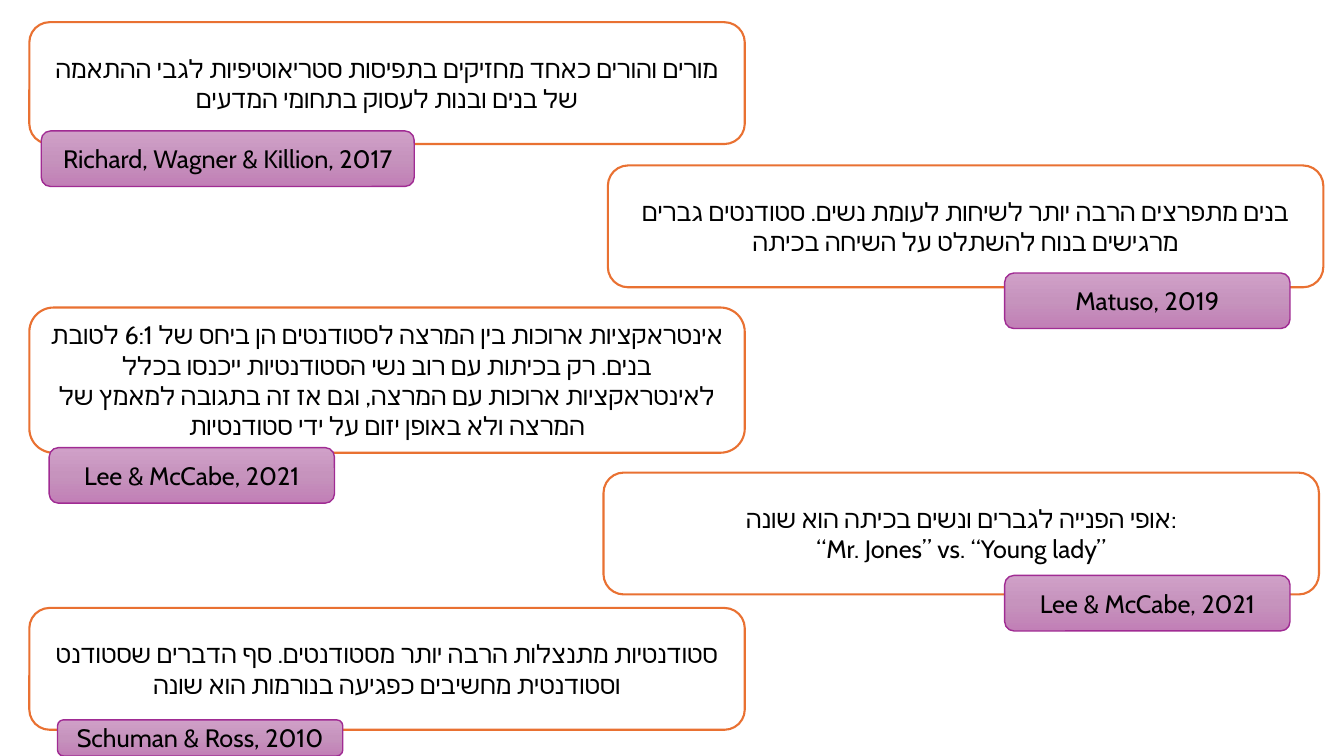
"""Build a slide of five gender-bias findings, each tagged with its citation."""
import copy
from dataclasses import dataclass

import pptx
import pptx.dml.color
import pptx.enum.shapes
import pptx.enum.text
import pptx.oxml
import pptx.oxml.ns
import pptx.util

FINDING_WIDTH = 18.03
TAG_GRADIENT = ((0, "D0A0C8"), (0.5, "C693BD"), (1, "C17FB6"))


@dataclass
class Finding:
    text: str
    citation: str
    left: float
    top: float
    tag_left: float
    tag_top: float
    height: float = 3.07
    tag_width: float = 7.19
    tag_height: float = 1.4


FINDINGS = [
    Finding("מורים והורים כאחד מחזיקים בתפיסות סטריאוטיפיות לגבי ההתאמה "
            "של בנים ובנות לעסוק בתחומי המדעים",
            "Richard, Wagner & Killion, 2017", 0.74, 0.56, 1.04, 3.3, tag_width=9.4),
    Finding("בנים מתפרצים הרבה יותר לשיחות לעומת נשים. סטודנטים גברים "
            "מרגישים בנוח להשתלט על השיחה בכיתה",
            "Matuso, 2019", 15.32, 4.17, 25.32, 6.88),
    Finding("אינטראקציות ארוכות בין המרצה לסטודנטים הן ביחס של 6:1 "
            "לטובת בנים. רק בכיתות עם רוב נשי הסטודנטיות ייכנסו בכלל "
            "לאינטראקציות ארוכות עם המרצה, וגם אז זה בתגובה למאמץ של "
            "המרצה ולא באופן יזום על ידי סטודנטיות",
            "Lee & McCabe, 2021", 0.74, 7.75, 1.24, 11.28, height=3.66),
    Finding("אופי הפנייה לגברים ונשים בכיתה הוא שונה:\v“Mr. Jones” vs. “Young lady”",
            "Lee & McCabe, 2021", 15.21, 11.91, 25.32, 14.5),
    Finding("סטודנטיות מתנצלות הרבה יותר מסטודנטים. סף הדברים שסטודנט "
            "וסטודנטית מחשיבים כפגיעה בנורמות הוא שונה",
            "Schuman & Ross, 2010", 0.74, 15.32, 1.45, 18.14, tag_height=0.91),
]


def color(value: str) -> pptx.dml.color.RGBColor:
    return pptx.dml.color.RGBColor.from_string(value)


def write(shape, text: str, *, size: float = 18, font: str = "Cabin",
          ink: str = "000000") -> None:
    frame = shape.text_frame
    frame.word_wrap = True
    frame.vertical_anchor = pptx.enum.text.MSO_ANCHOR.MIDDLE
    paragraph = frame.paragraphs[0]
    paragraph.text = text
    paragraph.alignment = pptx.enum.text.PP_ALIGN.CENTER
    for run in paragraph.runs:
        run.font.size = pptx.util.Pt(size)
        run.font.name = font
        run.font.color.rgb = color(ink)
        script_font = pptx.oxml.parse_xml(
            f'<a:cs {pptx.oxml.ns.nsdecls("a")} typeface="{font}"/>')
        run.font._element.append(script_font)


def add_box(slide, left: float, top: float, width: float, height: float,
            line: str, weight: float):
    box = slide.shapes.add_shape(
        pptx.enum.shapes.MSO_SHAPE.ROUNDED_RECTANGLE,
        *(pptx.util.Cm(length) for length in (left, top, width, height)))
    box.shadow.inherit = False
    box.line.color.rgb = color(line)
    box.line.width = pptx.util.Pt(weight)
    return box


def fill_gradient(shape) -> None:
    shape.fill.gradient()
    shape.fill.gradient_angle = 270
    stop_list = shape._element.spPr.find(".//" + pptx.oxml.ns.qn("a:gsLst"))
    stop_list.insert(1, copy.deepcopy(stop_list[0]))
    for stop, (position, value) in zip(shape.fill.gradient_stops, TAG_GRADIENT):
        stop.position = position
        stop.color.rgb = color(value)


def add_finding(slide, finding: Finding) -> None:
    statement = add_box(slide, finding.left, finding.top, FINDING_WIDTH,
                        finding.height, "E97132", 1.5)
    statement.fill.solid()
    statement.fill.fore_color.rgb = color("FFFFFF")
    write(statement, finding.text)
    tag = add_box(slide, finding.tag_left, finding.tag_top, finding.tag_width,
                  finding.tag_height, "A02B93", 1)
    fill_gradient(tag)
    write(tag, finding.citation)


def main() -> None:
    deck = pptx.Presentation()
    deck.slide_width = pptx.util.Cm(33.87)
    deck.slide_height = pptx.util.Cm(19.05)
    slide = deck.slides.add_slide(deck.slide_layouts[6])
    for finding in FINDINGS:
        add_finding(slide, finding)
    deck.save("out.pptx")


if __name__ == "__main__":
    main()
